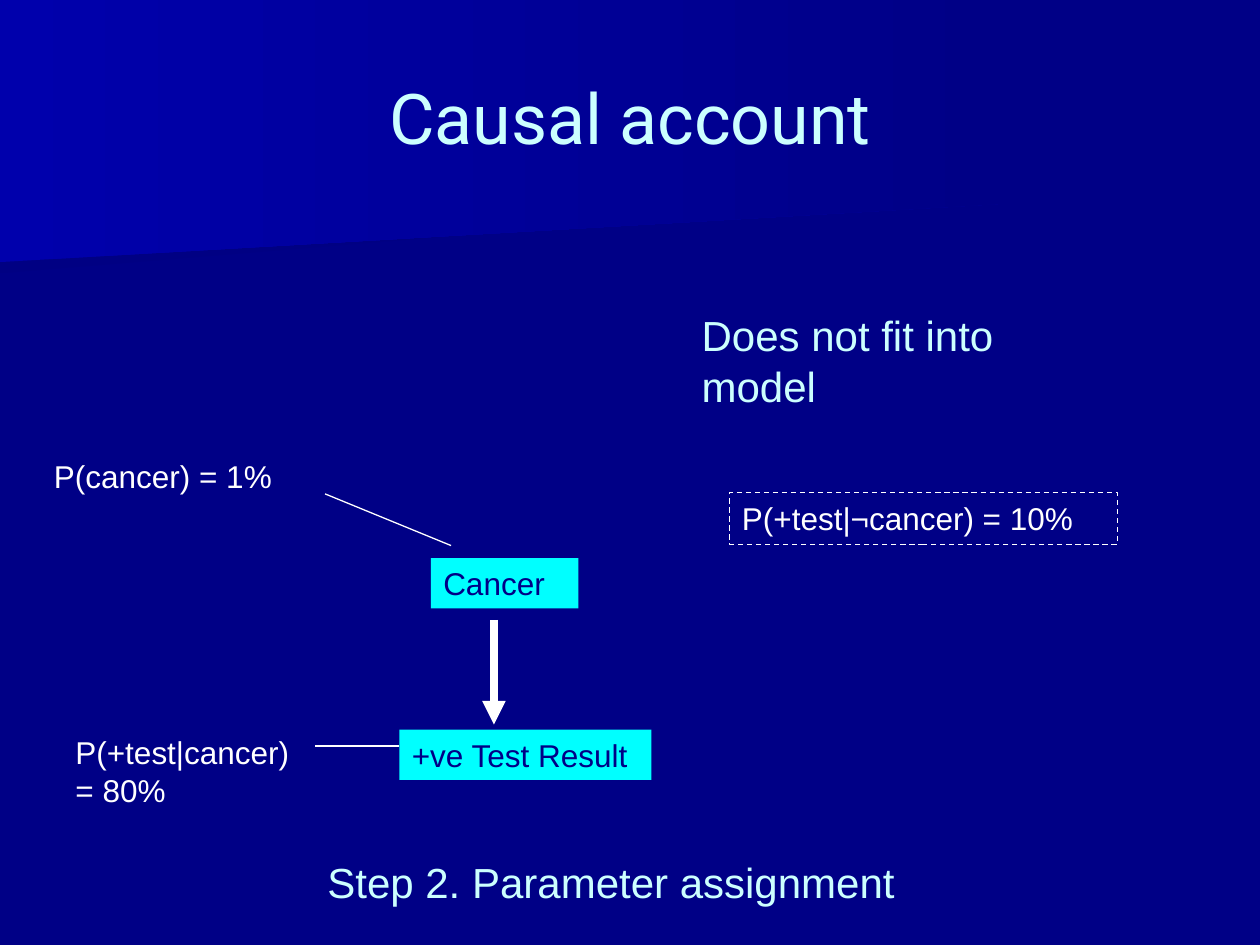
from dataclasses import dataclass
from typing import Optional

from pptx import Presentation
from pptx.dml.color import RGBColor
from pptx.enum.dml import MSO_LINE
from pptx.enum.shapes import MSO_CONNECTOR, MSO_SHAPE
from pptx.enum.text import MSO_ANCHOR, PP_ALIGN
from pptx.oxml.ns import qn
from pptx.util import Inches, Pt
from lxml.etree import SubElement

NAVY = RGBColor(0x00, 0x00, 0x86)
SHADE = RGBColor(0x00, 0x00, 0x83)
BLUE = RGBColor(0x00, 0x00, 0xAC)
CYAN = RGBColor(0x00, 0xFF, 0xFF)
PALE = RGBColor(0xCC, 0xFF, 0xFF)
WHITE = RGBColor(0xFF, 0xFF, 0xFF)


@dataclass(frozen=True)
class Label:
    text: str
    left: float
    top: float
    width: float
    height: float
    color: RGBColor = WHITE
    size: int = 18
    font: str = "Arial"
    align: PP_ALIGN = PP_ALIGN.LEFT
    anchor: MSO_ANCHOR = MSO_ANCHOR.TOP
    fill: Optional[RGBColor] = None
    dashed: bool = False


@dataclass(frozen=True)
class Link:
    start: tuple[float, float]
    end: tuple[float, float]
    width: float = 0.75
    arrow: bool = False


@dataclass(frozen=True)
class Band:
    points: list[tuple[float, float]]
    color: RGBColor


BANDS = [
    Band([(0, 1.01), (7.79, 1.01), (7.78, 1.53), (0, 2.17)], SHADE),
    Band([(0, 0), (7.92, 0), (7.92, 1.62), (0, 2.08)], BLUE),
]
LABELS = [
    Label("Causal account", 0.5, 0.3, 9, 1.25, PALE, 40, "Roboto",
          PP_ALIGN.CENTER, MSO_ANCHOR.MIDDLE),
    Label("Cancer", 3.42, 4.43, 1.17, 0.4, NAVY, fill=CYAN),
    Label("+ve Test Result", 3.17, 5.79, 2, 0.4, NAVY, fill=CYAN),
    Label("Step 2. Parameter assignment", 2.5, 6.75, 5.25, 0.5, PALE, 24),
    Label("P(cancer) = 1%", 0.33, 3.58, 2.08, 0.4),
    Label("P(+test|cancer) = 80%", 0.5, 5.77, 2.08, 0.7),
    Label("P(+test|¬cancer) = 10%", 5.79, 3.91, 3.08, 0.41, dashed=True),
    Label("Does not fit into model", 5.47, 2.41, 3.03, 0.9, PALE, 24),
]
LINKS = [
    Link((3.92, 4.92), (3.92, 5.75), 4.5, arrow=True),
    Link((2.58, 3.92), (3.58, 4.33)),
    Link((2.5, 5.92), (3.17, 5.92)),
]


def draw_band(page, band: Band) -> None:
    """Draw a background outline that fades to the page colour on the right."""
    corners = [(Inches(x), Inches(y)) for x, y in band.points]
    builder = page.shapes.build_freeform(*corners[0], scale=1.0)
    builder.add_line_segments(corners[1:], close=True)
    shape = builder.convert_to_shape()
    shape.shadow.inherit = False
    shape.line.fill.background()
    shape.fill.gradient()
    shape.fill.gradient_angle = 0
    for stop, color, position in zip(shape.fill.gradient_stops, (band.color, NAVY), (0, 1)):
        stop.color.rgb = color
        stop.position = position


def draw_label(page, label: Label) -> None:
    bounds = [Inches(value) for value in (label.left, label.top, label.width, label.height)]
    if label.fill or label.dashed:
        box = page.shapes.add_shape(MSO_SHAPE.RECTANGLE, *bounds)
        box.shadow.inherit = False
    else:
        box = page.shapes.add_textbox(*bounds)
    if label.fill:
        box.fill.solid()
        box.fill.fore_color.rgb = label.fill
    else:
        box.fill.background()
    if label.dashed:
        box.line.color.rgb = WHITE
        box.line.width = Pt(0.75)
        box.line.dash_style = MSO_LINE.DASH
    else:
        box.line.fill.background()

    frame = box.text_frame
    frame.text = label.text
    frame.word_wrap = True
    frame.vertical_anchor = label.anchor
    para = frame.paragraphs[0]
    para.alignment = label.align
    font = para.runs[0].font
    font.name = label.font
    font.size = Pt(label.size)
    font.color.rgb = label.color


def draw_link(page, link: Link) -> None:
    ends = [Inches(value) for value in (*link.start, *link.end)]
    connector = page.shapes.add_connector(MSO_CONNECTOR.STRAIGHT, *ends)
    connector.line.color.rgb = WHITE
    connector.line.width = Pt(link.width)
    if link.arrow:
        SubElement(connector.line._get_or_add_ln(), qn("a:tailEnd"), type="triangle")
    SubElement(connector._element.spPr, qn("a:effectLst"))


def main() -> None:
    deck = Presentation()
    deck.slide_width, deck.slide_height = Inches(10), Inches(7.5)
    page = deck.slides.add_slide(deck.slide_layouts[6])
    page.background.fill.solid()
    page.background.fill.fore_color.rgb = NAVY
    for band in BANDS:
        draw_band(page, band)
    for label in LABELS:
        draw_label(page, label)
    for link in LINKS:
        draw_link(page, link)
    deck.save("out.pptx")


if __name__ == "__main__":
    main()
